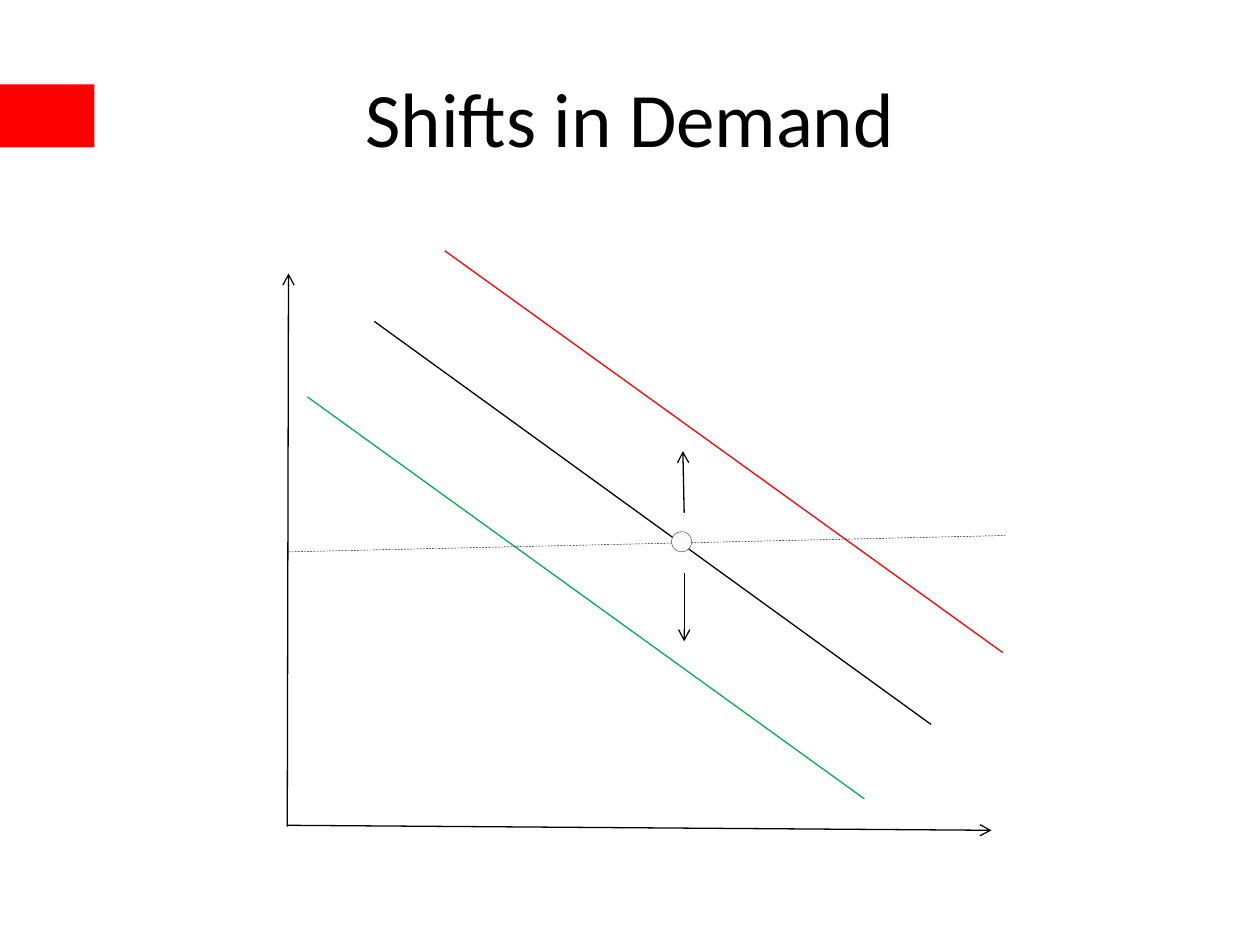
from lxml import etree
from pptx import Presentation
from pptx.dml.color import RGBColor
from pptx.enum.dml import MSO_LINE
from pptx.enum.shapes import MSO_CONNECTOR, MSO_SHAPE
from pptx.enum.text import MSO_ANCHOR, PP_ALIGN
from pptx.oxml.ns import qn
from pptx.util import Inches, Pt

STRAIGHT = MSO_CONNECTOR.STRAIGHT
RECT, OVAL = MSO_SHAPE.RECTANGLE, MSO_SHAPE.OVAL
DASH = MSO_LINE.DASH
MIDDLE, CENTER = MSO_ANCHOR.MIDDLE, PP_ALIGN.CENTER

BLACK = RGBColor(0x00, 0x00, 0x00)
RED = RGBColor(0xFF, 0x00, 0x00)
GREEN = RGBColor(0x00, 0xB0, 0x50)
NAVY = RGBColor(0x1F, 0x49, 0x7D)
OFF_WHITE = RGBColor(0xFC, 0xFB, 0xF9)

FONT = "Calibri"

AXES = [((2.28, 6.55), (7.87, 6.59)), ((2.28, 6.56), (2.29, 2.17))]
DEMAND_CURVES = [
    ((2.97, 2.55), (7.39, 5.75), BLACK),
    ((3.53, 1.99), (7.96, 5.18), RED),
    ((2.44, 3.15), (6.86, 6.34), GREEN),
]
SHIFT_ARROWS = [((5.43, 4.07), (5.42, 3.58)), ((5.43, 4.55), (5.43, 5.09))]


def add_title(slide, text):
    tb = slide.shapes.add_textbox(Inches(0.5), Inches(0.3), Inches(9), Inches(1.25))
    tf = tb.text_frame
    tf.word_wrap = True
    tf.vertical_anchor = MIDDLE
    p = tf.paragraphs[0]
    p.alignment = CENTER
    r = p.add_run()
    r.text = text
    r.font.name = FONT
    r.font.size = Pt(44)
    r.font.color.rgb = BLACK


def add_filled_shape(slide, kind, left, top, width, height, fill, line=None):
    sp = slide.shapes.add_shape(
        kind, Inches(left), Inches(top), Inches(width), Inches(height))
    sp.shadow.inherit = False
    sp.fill.solid()
    sp.fill.fore_color.rgb = fill
    if line is None:
        sp.line.fill.background()
    else:
        sp.line.color.rgb = line
        sp.line.width = Pt(0.25)


def add_line(slide, start, end, color=BLACK, width=0.75, dash=None, arrow=False):
    x1, y1 = start
    x2, y2 = end
    cn = slide.shapes.add_connector(
        STRAIGHT, Inches(x1), Inches(y1), Inches(x2), Inches(y2))
    cn.line.color.rgb = color
    cn.line.width = Pt(width)
    if dash is not None:
        cn.line.dash_style = dash
    if arrow:
        etree.SubElement(cn.line._get_or_add_ln(), qn("a:tailEnd"), type="arrow")
    etree.SubElement(cn._element.spPr, qn("a:effectLst"))


def main():
    prs = Presentation()
    prs.slide_width, prs.slide_height = Inches(10), Inches(7.5)
    slide = prs.slides.add_slide(prs.slide_layouts[6])

    # Accent bar and title
    add_filled_shape(slide, RECT, 0, 0.67, 0.75, 0.5, RED)
    add_title(slide, "Shifts in Demand")

    # Axes
    for start, end in AXES:
        add_line(slide, start, end, arrow=True)

    # Demand curves
    for start, end, color in DEMAND_CURVES:
        add_line(slide, start, end, color)

    # Directions of the shift
    for start, end in SHIFT_ARROWS:
        add_line(slide, start, end, arrow=True)

    # Price level and the point on the middle curve
    add_line(slide, (2.29, 4.38), (7.98, 4.25), width=0.25, dash=DASH)
    add_filled_shape(slide, OVAL, 5.33, 4.22, 0.16, 0.16, OFF_WHITE, NAVY)

    prs.save("out.pptx")


if __name__ == "__main__":
    main()
